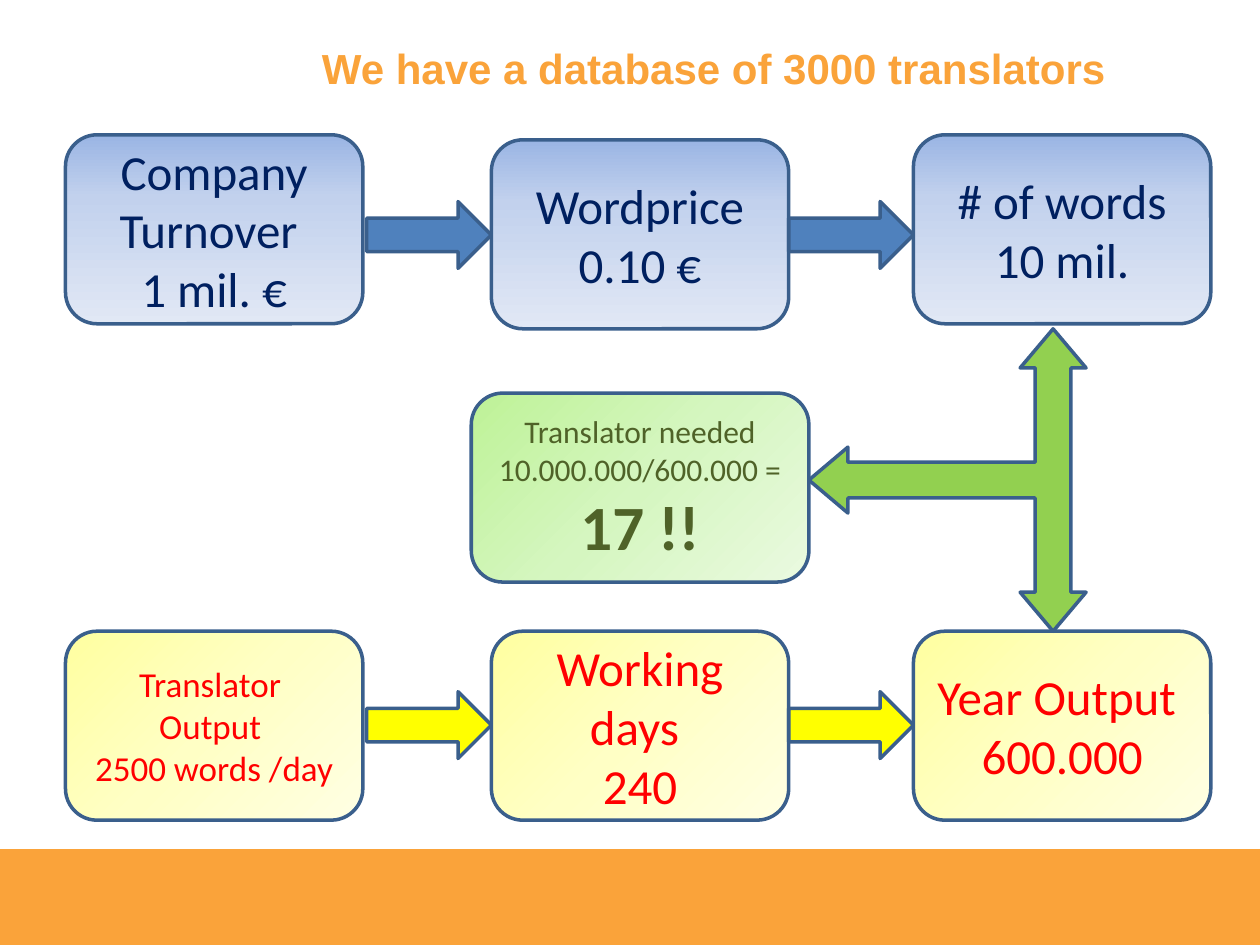
from copy import deepcopy

from pptx import Presentation
from pptx.dml.color import RGBColor
from pptx.enum.shapes import MSO_SHAPE
from pptx.enum.text import MSO_ANCHOR, PP_ALIGN
from pptx.oxml.ns import qn
from pptx.util import Inches, Pt

ORANGE = RGBColor(0xFA, 0xA3, 0x3A)
OUTLINE = RGBColor(0x3A, 0x5F, 0x8C)
NAVY = RGBColor(0x00, 0x20, 0x60)
RED = RGBColor(0xFF, 0x00, 0x00)
OLIVE = RGBColor(0x4F, 0x62, 0x28)
BLUE = RGBColor(0x4F, 0x81, 0xBD)
YELLOW = RGBColor(0xFF, 0xFF, 0x00)
GREEN = RGBColor(0x92, 0xD0, 0x50)

BLUE_FADE = (
    (0, RGBColor(0x9A, 0xB5, 0xE4)),
    (0.33, RGBColor(0xC2, 0xD1, 0xED)),
    (1, RGBColor(0xE1, 0xE8, 0xF5)),
)
GREEN_FADE = (
    (0, RGBColor(0xBE, 0xF2, 0x97)),
    (0.5, RGBColor(0xD5, 0xF6, 0xC0)),
    (1, RGBColor(0xEA, 0xFA, 0xE0)),
)
YELLOW_FADE = (
    (0, RGBColor(0xFF, 0xFF, 0xA0)),
    (0.5, RGBColor(0xFF, 0xFF, 0xC5)),
    (1, RGBColor(0xFF, 0xFF, 0xE3)),
)

SLIDE_W, SLIDE_H = 10, 7.5
COLUMNS = (0.52, 3.9, 7.25)
TOP_ROW, MIDDLE_ROW, BOTTOM_ROW = 1.07, 3.12, 5.01
BOX_W, BOX_H = 2.36, 1.5
ARROW_W, ARROW_H = 0.99, 0.53
BAND_TOP = 6.74


def write(holder, lines, size, color, font="Calibri", bold=False, last_size=None):
    frame = holder.text_frame
    frame.word_wrap = True
    frame.vertical_anchor = MSO_ANCHOR.MIDDLE
    for index, line in enumerate(lines):
        paragraph = frame.paragraphs[0] if index == 0 else frame.add_paragraph()
        paragraph.alignment = PP_ALIGN.CENTER
        run = paragraph.add_run()
        run.text = line
        emphasised = last_size is not None and index == len(lines) - 1
        run.font.name = font
        run.font.size = Pt(last_size if emphasised else size)
        run.font.bold = bold or emphasised
        run.font.color.rgb = color


def add_outlined(slide, kind, left, top, width, height):
    shape = slide.shapes.add_shape(
        kind, Inches(left), Inches(top), Inches(width), Inches(height)
    )
    shape.shadow.inherit = False
    shape.line.color.rgb = OUTLINE
    shape.line.width = Pt(2)
    return shape


def fade(shape, stops, angle):
    shape.fill.gradient()
    shape.fill.gradient_angle = 360 - angle
    stop_list = shape.element.spPr.find(qn("a:gradFill")).find(qn("a:gsLst"))
    stop_list.append(deepcopy(stop_list[-1]))
    for stop, (position, color) in zip(shape.fill.gradient_stops, stops):
        stop.position = position
        stop.color.rgb = color


def add_box(slide, left, top, lines, size, color, stops, angle=45, width=BOX_W, **text):
    box = add_outlined(slide, MSO_SHAPE.ROUNDED_RECTANGLE, left, top, width, BOX_H)
    fade(box, stops, angle)
    write(box, lines, size, color, **text)


def add_step_arrows(slide, top, color):
    for target in COLUMNS[1:]:
        arrow = add_outlined(
            slide, MSO_SHAPE.RIGHT_ARROW, target - ARROW_W, top, ARROW_W, ARROW_H
        )
        arrow.fill.solid()
        arrow.fill.fore_color.rgb = color


def add_three_way_arrow(slide):
    arrow = add_outlined(slide, MSO_SHAPE.LEFT_RIGHT_UP_ARROW, 6.32, 2.71, 2.4, 2.2)
    arrow.rotation = 270
    for index, share in enumerate((0.129, 0.119, 0.141)):
        arrow.adjustments[index] = share
    arrow.fill.solid()
    arrow.fill.fore_color.rgb = GREEN


def add_band(slide):
    band = slide.shapes.add_shape(
        MSO_SHAPE.RECTANGLE,
        0, Inches(BAND_TOP), Inches(SLIDE_W), Inches(SLIDE_H - BAND_TOP),
    )
    band.shadow.inherit = False
    band.fill.solid()
    band.fill.fore_color.rgb = ORANGE
    band.line.fill.background()


def add_title(slide):
    title = slide.shapes.add_textbox(
        Inches(1.83), Inches(0.24), Inches(7.67), Inches(0.59)
    )
    write(title, ["We have a database of 3000 translators"], 24, ORANGE,
          font="Arial", bold=True)


def main():
    deck = Presentation()
    deck.slide_width, deck.slide_height = Inches(SLIDE_W), Inches(SLIDE_H)
    slide = deck.slides.add_slide(deck.slide_layouts[6])
    add_band(slide)
    add_title(slide)

    demand = (
        (TOP_ROW, ["Company", "Turnover ", "1 mil. €"]),
        (TOP_ROW + 0.04, ["Wordprice", "0.10 €"]),
        (TOP_ROW, ["# of words", "10 mil."]),
    )
    for left, (top, lines) in zip(COLUMNS, demand):
        add_box(slide, left, top, lines, 28, NAVY, BLUE_FADE, angle=90)

    add_box(slide, 3.74, MIDDLE_ROW,
            ["Translator needed", "10.000.000/600.000 =", "17 !!"],
            18, OLIVE, GREEN_FADE, width=2.68, last_size=36)

    capacity = (
        (20, ["Translator ", "Output ", "2500 words /day"]),
        (28, ["Working days ", "240"]),
        (28, ["Year Output ", "600.000"]),
    )
    for left, (size, lines) in zip(COLUMNS, capacity):
        add_box(slide, left, BOTTOM_ROW, lines, size, RED, YELLOW_FADE)

    add_step_arrows(slide, 1.6, BLUE)
    add_step_arrows(slide, 5.49, YELLOW)
    add_three_way_arrow(slide)
    deck.save("out.pptx")


if __name__ == "__main__":
    main()
